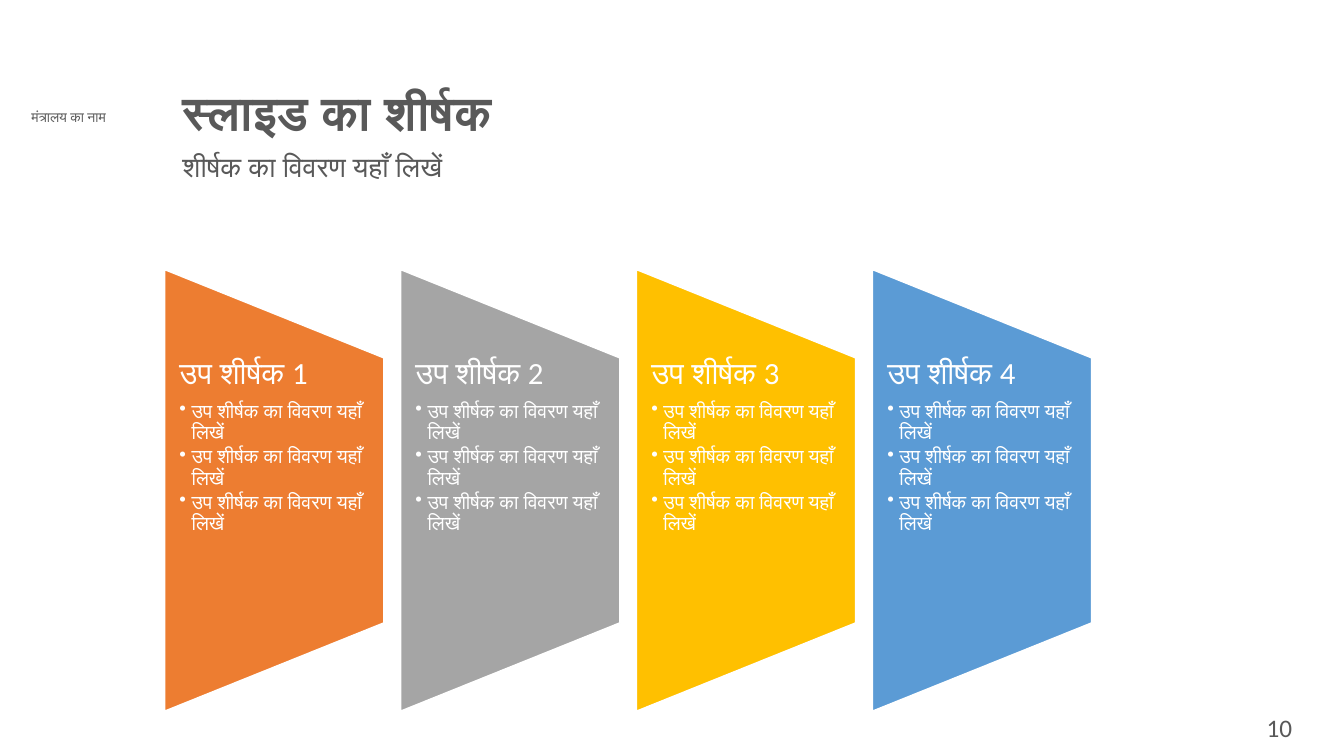
from dataclasses import dataclass

from lxml import etree
from pptx import Presentation
from pptx.dml.color import RGBColor
from pptx.enum.shapes import MSO_SHAPE
from pptx.enum.text import MSO_ANCHOR, MSO_AUTO_SIZE, PP_ALIGN
from pptx.oxml.ns import qn
from pptx.util import Inches, Pt

LEFT, CENTER = PP_ALIGN.LEFT, PP_ALIGN.CENTER
TOP, NO_FIT = MSO_ANCHOR.TOP, MSO_AUTO_SIZE.NONE
TRAPEZOID = MSO_SHAPE.FLOWCHART_MANUAL_OPERATION

MINISTRY = "मंत्रालय का नाम"
TITLE = "स्लाइड का शीर्षक"
SUBTITLE = "शीर्षक का विवरण यहाँ लिखें"
PAGE_NUMBER = "10"
DETAIL = "उप शीर्षक का विवरण यहाँ लिखें"
PANELS = [
    ("उप शीर्षक 1", "ED7D31", [DETAIL] * 3),
    ("उप शीर्षक 2", "A5A5A5", [DETAIL] * 3),
    ("उप शीर्षक 3", "FFC000", [DETAIL] * 3),
    ("उप शीर्षक 4", "5B9BD5", [DETAIL] * 3),
]

PANEL_LEFT, PANEL_TOP, PANEL_PITCH = 1.63, 2.67, 2.34
PANEL_WIDTH, PANEL_HEIGHT = 2.18, 4.39
PANEL_TEXT_SHARE = 0.6
BULLET_INDENT = 0.12


@dataclass(frozen=True)
class Theme:
    """Colours, fonts and type sizes of the slide."""
    grey: str = "595959"
    white: str = "FFFFFF"
    font: str = "Calibri"
    label_font: str = "Lato"
    title: int = 34
    heading: int = 22
    subtitle: int = 20
    page: int = 18
    bullet: int = 14
    label: int = 10


THEME = Theme()


def write(paragraph, text, size, color=THEME.grey, font=THEME.font, bold=False,
          align=LEFT, spacing=1.0, after=0, bullet=None, indent=0):
    """Fill one paragraph and format it."""
    properties = paragraph._p.get_or_add_pPr()
    properties.set("marL", str(Inches(indent)))
    properties.set("indent", str(-Inches(indent)))
    if bullet:
        etree.SubElement(properties, qn("a:buChar")).set("char", bullet)
    else:
        etree.SubElement(properties, qn("a:buNone"))
    paragraph.alignment = align
    paragraph.line_spacing = spacing
    paragraph.space_before = Pt(0)
    paragraph.space_after = Pt(after)
    run = paragraph.add_run()
    run.text = text
    run.font.name = font
    run.font.size = Pt(size)
    run.font.bold = bold
    run.font.color.rgb = RGBColor.from_string(color)


def prepare(shape, left, top, width, height):
    """Place a text shape and return its wrapped, top-anchored frame."""
    shape.left, shape.top = Inches(left), Inches(top)
    shape.width, shape.height = Inches(width), Inches(height)
    frame = shape.text_frame
    frame.word_wrap = True
    frame.auto_size = NO_FIT
    frame.vertical_anchor = TOP
    return frame


def add_text_box(slide, left, top, width, height):
    """Add an empty text box and return its frame."""
    return prepare(slide.shapes.add_textbox(0, 0, 0, 0), left, top, width, height)


def add_panel(slide, left, heading, color, details):
    """Add a turned trapezoid with a heading and bullets over it."""
    turned_left = left + (PANEL_WIDTH - PANEL_HEIGHT) / 2
    turned_top = PANEL_TOP + (PANEL_HEIGHT - PANEL_WIDTH) / 2
    shape = slide.shapes.add_shape(
        TRAPEZOID, Inches(turned_left), Inches(turned_top),
        Inches(PANEL_HEIGHT), Inches(PANEL_WIDTH))
    shape.rotation = 270
    shape.shadow.inherit = False
    shape.fill.solid()
    shape.fill.fore_color.rgb = RGBColor.from_string(color)
    shape.line.color.rgb = RGBColor.from_string(THEME.white)
    shape.line.width = Pt(1.5)

    text_height = PANEL_HEIGHT * PANEL_TEXT_SHARE
    text_top = PANEL_TOP + (PANEL_HEIGHT - text_height) / 2
    frame = add_text_box(slide, left, text_top, PANEL_WIDTH, text_height)
    frame.margin_left = frame.margin_right = Inches(0.15)
    frame.margin_top = frame.margin_bottom = 0
    write(frame.paragraphs[0], heading, THEME.heading, color=THEME.white,
          spacing=0.9, after=7.7)
    for detail in details:
        paragraph = frame.add_paragraph()
        paragraph.level = 1
        write(paragraph, detail, THEME.bullet, color=THEME.white, spacing=0.9,
              after=2.1, bullet="•", indent=BULLET_INDENT)


def main():
    """Build the slide and save it."""
    presentation = Presentation()
    presentation.slide_width = Inches(13.33)
    presentation.slide_height = Inches(7.5)
    slide = presentation.slides.add_slide(presentation.slide_layouts[1])

    frame = add_text_box(slide, 0.03, 1.03, 1.3, 0.27)
    write(frame.paragraphs[0], MINISTRY, THEME.label, font=THEME.label_font, align=CENTER)
    frame = prepare(slide.shapes.title, 1.71, 0.84, 9.61, 0.55)
    write(frame.paragraphs[0], TITLE, THEME.title, bold=True, spacing=0.9)
    frame = prepare(slide.placeholders[1], 1.71, 1.47, 9.61, 0.63)
    write(frame.paragraphs[0], SUBTITLE, THEME.subtitle, spacing=0.9)

    for index, (heading, color, details) in enumerate(PANELS):
        add_panel(slide, PANEL_LEFT + index * PANEL_PITCH, heading, color, details)

    frame = add_text_box(slide, 12.1, 7.02, 1.18, 0.45)
    write(frame.paragraphs[0], PAGE_NUMBER, THEME.page, align=CENTER)
    presentation.save("out.pptx")


if __name__ == "__main__":
    main()
